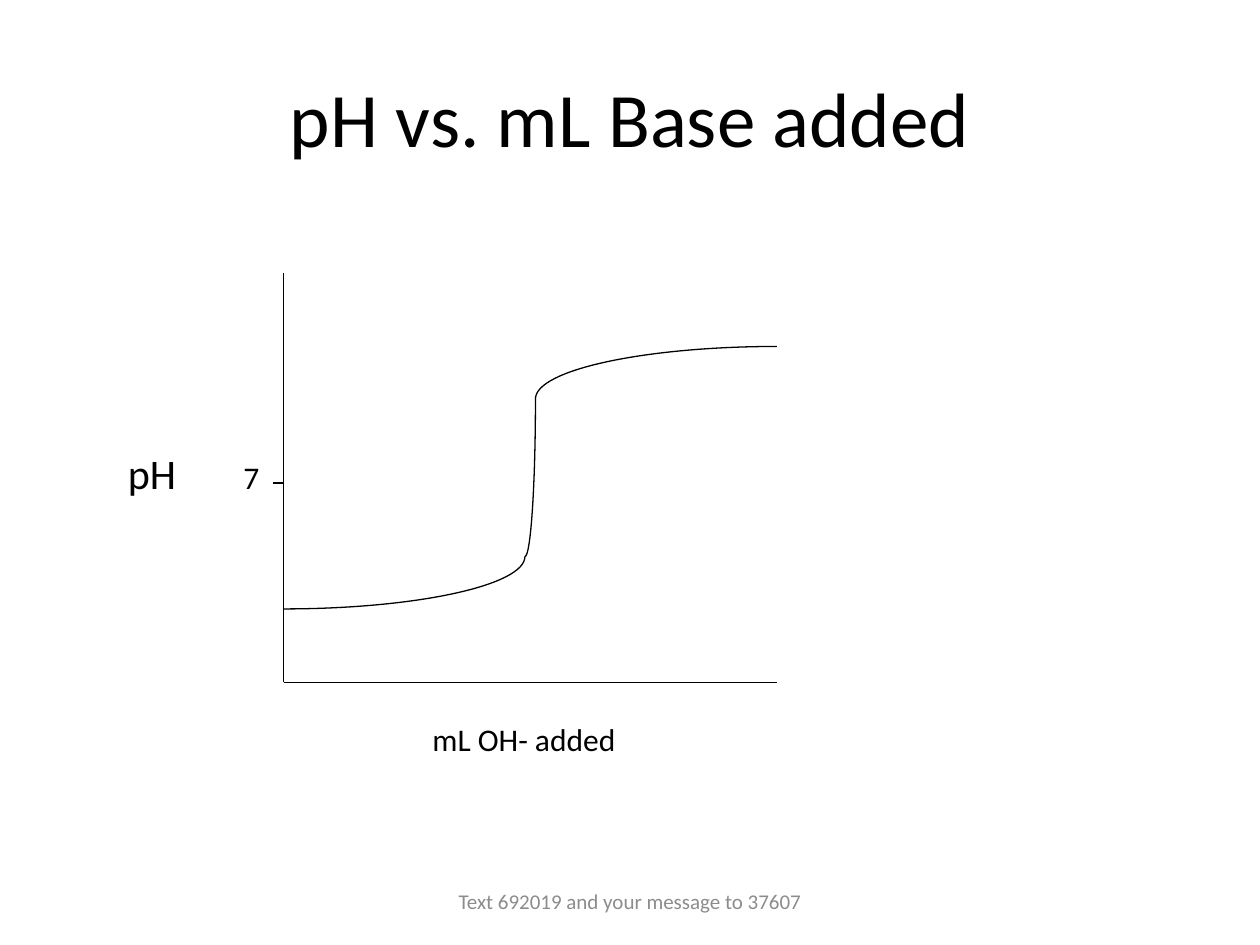
from dataclasses import dataclass

from lxml.etree import SubElement
from pptx import Presentation
from pptx.dml.color import RGBColor
from pptx.enum.shapes import MSO_CONNECTOR
from pptx.enum.text import MSO_ANCHOR, MSO_AUTO_SIZE, PP_ALIGN
from pptx.oxml.ns import qn
from pptx.util import Inches, Pt


@dataclass(frozen=True)
class Theme:
    font: str = "Calibri"
    ink: str = "000000"
    muted: str = "8C8C8C"
    title: int = 44
    axis_name: int = 24
    label: int = 18
    footer: int = 12
    line: float = 0.75


THEME = Theme()

# Left, top, width, height in inches
TITLE = ("pH vs. mL Base added", (0.5, 0.3, 9, 1.25))
FOOTER = ("Text 692019 and your message to 37607", (41 / 12, 6.95, 38 / 12, 0.4))
AXIS_LABELS = [
    ("pH", (11 / 12, 3.5, 0.59, 0.5), THEME.axis_name),
    ("mL OH- added", (40 / 12, 68 / 12, 1.67, 0.4), THEME.label),
    ("7", (22 / 12, 43 / 12, 0.33, 0.4), THEME.label),
]

# The graph lies on a grid of twelfths of an inch
GRID = Inches(1) / 12
LEFT, RIGHT, TOP, BOTTOM = 27, 74, 26, 65
NEUTRAL, TICK = 46, 1
AXIS_LINES = [
    ((LEFT, TOP), (LEFT, BOTTOM)),
    ((LEFT, BOTTOM), (RIGHT, BOTTOM)),
    ((LEFT - TICK, NEUTRAL), (LEFT, NEUTRAL)),
]
ACID_START, RISE_START = (LEFT, 58), (50, 53)
RISE_END, BASE_END = (51, 38), (RIGHT, 33)
CURVE_ARCS = [
    (ACID_START, RISE_START),
    (BASE_END, RISE_END),
    (RISE_START, RISE_END),
]
ROUNDNESS = 0.55


def on_grid(point):
    return tuple(round(value * GRID) for value in point)


def add_text(page, text, place, *, size, color=THEME.ink, centred=False):
    box = page.shapes.add_textbox(*map(Inches, place))
    frame = box.text_frame
    frame.word_wrap = centred
    para = frame.paragraphs[0]
    if centred:
        frame.vertical_anchor = MSO_ANCHOR.MIDDLE
        para.alignment = PP_ALIGN.CENTER
    else:
        frame.auto_size = MSO_AUTO_SIZE.SHAPE_TO_FIT_TEXT
    span = para.add_run()
    span.text = text
    span.font.name = THEME.font
    span.font.size = Pt(size)
    span.font.color.rgb = RGBColor.from_string(color)


def style_line(shape):
    shape.line.color.rgb = RGBColor.from_string(THEME.ink)
    shape.line.width = Pt(THEME.line)


def add_line(page, start, end):
    line = page.shapes.add_connector(
        MSO_CONNECTOR.STRAIGHT, *on_grid(start), *on_grid(end))
    style_line(line)
    SubElement(line._element.spPr, qn("a:effectLst"))


def add_quarter_ellipse(page, start, end):
    """Draw a Bézier arc that leaves start horizontally and reaches end vertically."""
    (x0, y0), (x1, y1) = start, end
    controls = [(x0 + ROUNDNESS * (x1 - x0), y0),
                (x1, y1 + ROUNDNESS * (y0 - y1))]
    builder = page.shapes.build_freeform(*on_grid(start))
    builder.add_line_segments(map(on_grid, [*controls, end]), close=False)
    arc = builder.convert_to_shape()
    bend_segments(arc)
    arc.fill.background()
    arc.shadow.inherit = False
    style_line(arc)


def bend_segments(shape):
    """Turn the three straight segments of a freeform into one cubic Bézier."""
    outline = next(shape._element.iter(qn("a:path")))
    segments = outline.findall(qn("a:lnTo"))
    curve = SubElement(outline, qn("a:cubicBezTo"))
    for segment in segments:
        curve.append(segment[0])
        outline.remove(segment)


def main():
    deck = Presentation()
    deck.slide_width, deck.slide_height = Inches(10), Inches(7.5)
    page = deck.slides.add_slide(deck.slide_layouts[6])
    add_text(page, *TITLE, size=THEME.title, centred=True)
    for start, end in AXIS_LINES:
        add_line(page, start, end)
    for start, end in CURVE_ARCS:
        add_quarter_ellipse(page, start, end)
    for text, place, size in AXIS_LABELS:
        add_text(page, text, place, size=size)
    add_text(page, *FOOTER, size=THEME.footer, color=THEME.muted, centred=True)
    deck.save("out.pptx")


if __name__ == "__main__":
    main()
